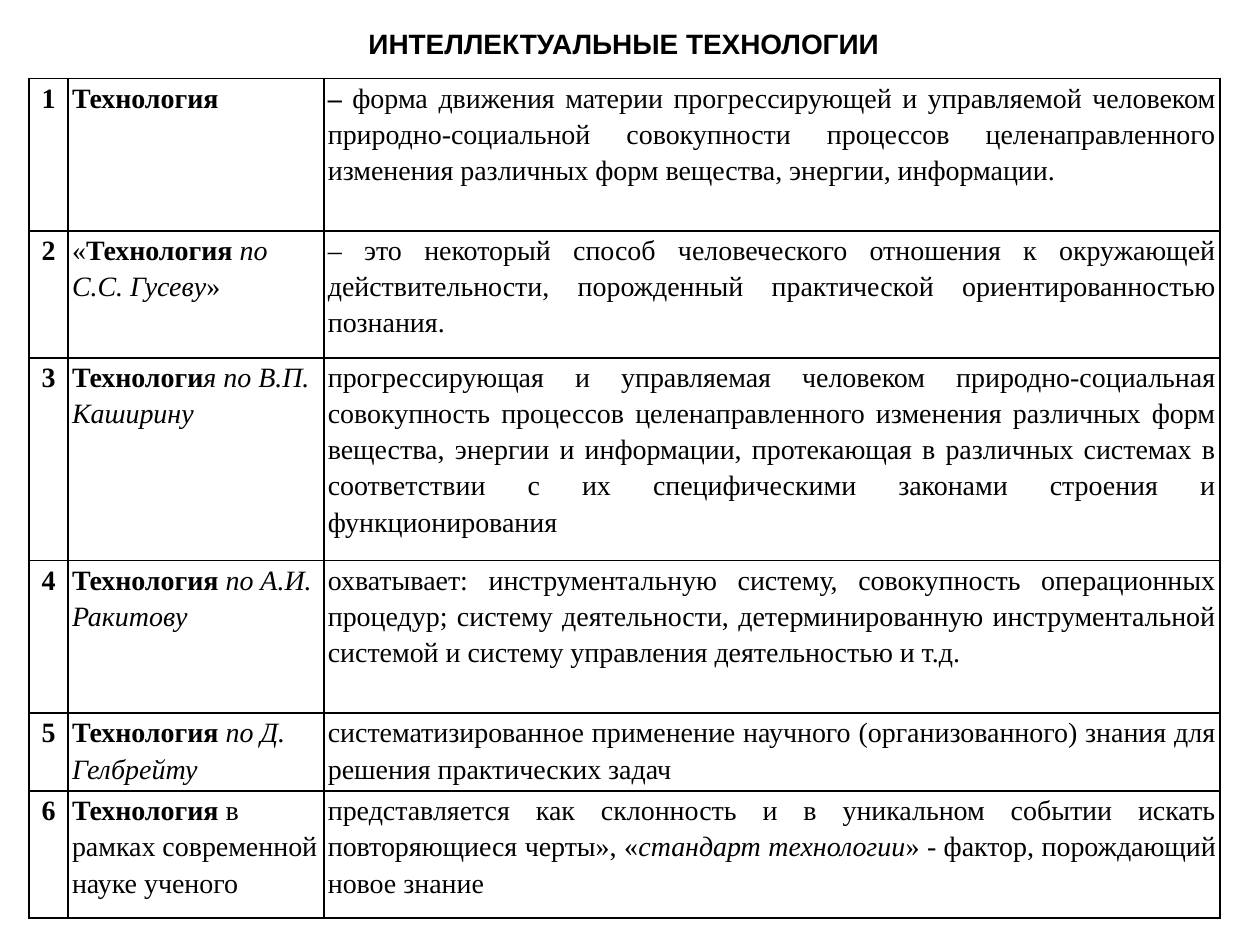
from dataclasses import dataclass
from typing import NamedTuple

from lxml import etree
from pptx import Presentation
from pptx.dml.color import RGBColor
from pptx.enum import text
from pptx.oxml import ns
from pptx.util import Pt


@dataclass(frozen=True)
class Theme:
    ink: RGBColor = RGBColor(0, 0, 0)
    paper: RGBColor = RGBColor(255, 255, 255)
    heading_face: str = "Arial"
    table_face: str = "Times New Roman"
    size: int = 16
    rule: int = 1
    line_spacing: float = 1.16


class Span(NamedTuple):
    words: str
    bold: bool = False
    italic: bool = False


@dataclass(frozen=True)
class Definition:
    term: list[Span]
    meaning: list[Span]
    height: float


THEME = Theme()
COLUMN_WIDTHS = (22.3, 146.2, 511.9)
DEFINITIONS = [
    Definition(
        [Span("Технология", bold=True)],
        [Span("– ", bold=True),
         Span("форма движения материи прогрессирующей и управляемой человеком "
              "природно-социальной совокупности процессов целенаправленного "
              "изменения различных форм вещества, энергии, информации.")],
        87.1),
    Definition(
        [Span("«"), Span("Технология", bold=True),
         Span(" по С.С. Гусеву", italic=True), Span("»")],
        [Span("– это некоторый способ человеческого отношения к окружающей "
              "действительности, порожденный практической ориентированностью "
              "познания.")],
        72.6),
    Definition(
        [Span("Технологи", bold=True), Span("я по В.П. Каширину", italic=True)],
        [Span("прогрессирующая и управляемая человеком природно-социальная "
              "совокупность процессов целенаправленного изменения различных "
              "форм вещества, энергии и информации, протекающая в различных "
              "системах в соответствии с их специфическими законами строения и "
              "функционирования")],
        115.9),
    Definition(
        [Span("Технология", bold=True), Span(" по А.И. Ракитову", italic=True)],
        [Span("охватывает: инструментальную систему, совокупность операционных "
              "процедур; систему деятельности, детерминированную "
              "инструментальной системой и систему управления деятельностью и "
              "т.д.")],
        87.1),
    Definition(
        [Span("Технология", bold=True), Span(" по Д. Гелбрейту", italic=True)],
        [Span("систематизированное применение научного (организованного) знания "
              "для решения практических задач")],
        43.2),
    Definition(
        [Span("Технология", bold=True), Span(" в рамках современной науке ученого")],
        [Span("представляется как склонность и в уникальном событии искать "
              "повторяющиеся черты», «"),
         Span("стандарт технологии", italic=True),
         Span("» - фактор, порождающий новое знание")],
        72.6),
]


def set_font(paragraph, face: str) -> None:
    paragraph.font.name = face
    paragraph.font.size = Pt(THEME.size)
    paragraph.font.color.rgb = THEME.ink


def set_indent(paragraph, left: float, first: float) -> None:
    properties = paragraph._p.get_or_add_pPr()
    properties.set("marL", str(Pt(left)))
    properties.set("indent", str(Pt(first)))


def add_borders(cell) -> None:
    properties = cell._tc.get_or_add_tcPr()
    for position, side in enumerate(("lnL", "lnR", "lnT", "lnB")):
        border = etree.Element(ns.qn(f"a:{side}"), w=str(Pt(THEME.rule)))
        fill = etree.SubElement(border, ns.qn("a:solidFill"))
        etree.SubElement(fill, ns.qn("a:srgbClr"), val=str(THEME.ink))
        properties.insert(position, border)


def fill_cell(cell, spans: list[Span], align: text.PP_ALIGN):
    cell.margin_left = cell.margin_right = Pt(2.2)
    cell.margin_top = cell.margin_bottom = Pt(0)
    cell.fill.solid()
    cell.fill.fore_color.rgb = THEME.paper
    add_borders(cell)
    paragraph = cell.text_frame.paragraphs[0]
    paragraph.alignment = align
    paragraph.line_spacing = THEME.line_spacing
    set_font(paragraph, THEME.table_face)
    for span in spans:
        run = paragraph.add_run()
        run.text = span.words
        run.font.bold = span.bold
        run.font.italic = span.italic
    return paragraph


def add_heading(slide, words: str) -> None:
    heading = slide.shapes.title
    heading.left, heading.top = Pt(106.6), Pt(11.5)
    heading.width, heading.height = Pt(483.8), Pt(26.6)
    frame = heading.text_frame
    frame.text = words
    frame.word_wrap = True
    frame.vertical_anchor = text.MSO_ANCHOR.MIDDLE
    frame.auto_size = text.MSO_AUTO_SIZE.SHAPE_TO_FIT_TEXT
    paragraph = frame.paragraphs[0]
    paragraph.alignment = text.PP_ALIGN.CENTER
    set_indent(paragraph, 0, 16)
    set_font(paragraph, THEME.heading_face)
    paragraph.font.bold = True


def add_definitions(slide, definitions: list[Definition]) -> None:
    table = slide.shapes.add_table(
        len(definitions), len(COLUMN_WIDTHS), Pt(16.7), Pt(44.8),
        Pt(sum(COLUMN_WIDTHS)), Pt(sum(d.height for d in definitions))).table
    table.first_row = table.horz_banding = False
    for column, width in zip(table.columns, COLUMN_WIDTHS):
        column.width = Pt(width)
    for number, (row, definition) in enumerate(zip(table.rows, definitions), 1):
        row.height = Pt(definition.height)
        ordinal, term, meaning = row.cells
        counter = fill_cell(ordinal, [Span(str(number), bold=True)],
                            text.PP_ALIGN.CENTER)
        set_indent(counter, 27, -27)
        fill_cell(term, definition.term, text.PP_ALIGN.LEFT)
        fill_cell(meaning, definition.meaning, text.PP_ALIGN.JUSTIFY)


def main() -> None:
    deck = Presentation()
    deck.slide_width, deck.slide_height = Pt(720), Pt(540)
    slide = deck.slides.add_slide(deck.slide_layouts.get_by_name("Title Only"))
    add_heading(slide, "ИНТЕЛЛЕКТУАЛЬНЫЕ ТЕХНОЛОГИИ")
    add_definitions(slide, DEFINITIONS)
    deck.save("out.pptx")


if __name__ == "__main__":
    main()
